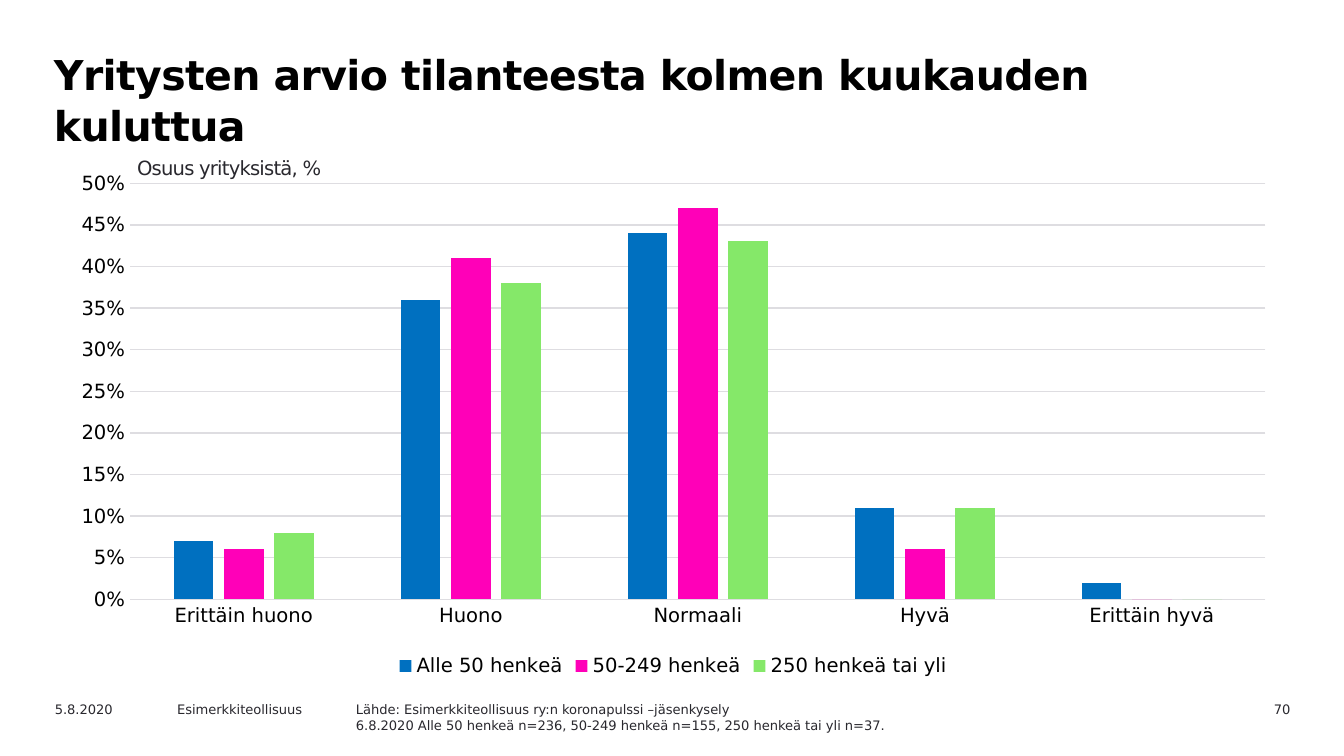
from lxml import etree
from pptx import Presentation
from pptx.chart.data import CategoryChartData
from pptx.dml.color import RGBColor
from pptx.enum.chart import XL_CHART_TYPE, XL_LEGEND_POSITION, XL_TICK_MARK
from pptx.enum.text import MSO_ANCHOR, MSO_AUTO_SIZE, PP_ALIGN
from pptx.oxml.ns import qn
from pptx.util import Pt

COLUMNS = XL_CHART_TYPE.COLUMN_CLUSTERED
BOTTOM = XL_LEGEND_POSITION.BOTTOM
NO_TICK = XL_TICK_MARK.NONE
TOP = MSO_ANCHOR.TOP
NO_FIT = MSO_AUTO_SIZE.NONE
LEFT, RIGHT = PP_ALIGN.LEFT, PP_ALIGN.RIGHT

FONT = "DejaVu Sans"
BLACK, DARK, GRID = "000000", "29282E", "DEDDE1"
FOOTER_TOP = 372.2

CATEGORIES = ["Erittäin huono", "Huono", "Normaali", "Hyvä", "Erittäin hyvä"]
SERIES = [
    ("Alle 50 henkeä", "0070C0", (0.07, 0.36, 0.44, 0.11, 0.02)),
    ("50-249 henkeä", "FF00B8", (0.06, 0.41, 0.47, 0.06, 0)),
    ("250 henkeä tai yli", "85E869", (0.08, 0.38, 0.43, 0.11, 0)),
]


def rgb(value):
    return RGBColor.from_string(value)


def style_font(font, size, color, bold=False):
    font.name = FONT
    font.size = Pt(size)
    font.bold = bold
    font.color.rgb = rgb(color)


def style_text(tf, size, color, bold=False, align=LEFT, spacing=0):
    tf.word_wrap = True
    tf.auto_size = NO_FIT
    tf.vertical_anchor = TOP
    for p in tf.paragraphs:
        p.alignment = align
        for r in p.runs:
            style_font(r.font, size, color, bold)
            if spacing:
                r.font._element.set("spc", str(round(spacing * 100)))


def add_title(s, text):
    sp = s.shapes.title
    sp.left, sp.top, sp.width, sp.height = Pt(20.2), Pt(22.3), Pt(629.3), Pt(51.1)
    tf = sp.text_frame
    tf.text = text
    style_text(tf, 22, BLACK, bold=True, spacing=-0.3)
    p = tf.paragraphs[0]
    p.line_spacing = Pt(27)
    p._p.get_or_add_pPr().set("marL", str(Pt(1.5)))


def add_text(s, text, x, y, w, h, size=7, align=LEFT, spacing=0, inset=None):
    tf = s.shapes.add_textbox(Pt(x), Pt(y), Pt(w), Pt(h)).text_frame
    if inset is not None:
        tf.margin_left = tf.margin_right = Pt(inset)
        tf.margin_top = tf.margin_bottom = Pt(inset)
    tf.text = text
    style_text(tf, size, DARK, align=align, spacing=spacing)


def set_plot_layout(chart, x, y, w, h):
    """Place the inner plot area, in fractions of the chart."""
    area = chart._chartSpace.chart.plotArea
    for old in area.findall(qn("c:layout")):
        area.remove(old)
    layout = etree.Element(qn("c:layout"))
    manual = etree.SubElement(layout, qn("c:manualLayout"))
    parts = [("layoutTarget", "inner"), ("xMode", "edge"), ("yMode", "edge"),
             ("x", x), ("y", y), ("w", w), ("h", h)]
    for tag, val in parts:
        etree.SubElement(manual, qn(f"c:{tag}")).set("val", str(val))
    area.insert(0, layout)


def style_line(line):
    line.color.rgb = rgb(GRID)
    line.width = Pt(0.75)


def add_column_chart(s, x, y, w, h):
    data = CategoryChartData(number_format="0%")
    data.categories = CATEGORIES
    for name, _, values in SERIES:
        data.add_series(name, values)
    chart = s.shapes.add_chart(COLUMNS, Pt(x), Pt(y), Pt(w), Pt(h), data).chart
    chart.has_title = False
    style_font(chart.font, 10, DARK)
    set_plot_layout(chart, 0.06, 0.04, 0.92, 0.8)

    # Columns
    plot = chart.plots[0]
    plot.vary_by_categories = False
    plot.gap_width = 219
    plot.overlap = -27
    for series, (_, color, _) in zip(plot.series, SERIES):
        series.format.fill.solid()
        series.format.fill.fore_color.rgb = rgb(color)

    # Axes
    for axis in (chart.category_axis, chart.value_axis):
        axis.major_tick_mark = axis.minor_tick_mark = NO_TICK
        style_font(axis.tick_labels.font, 10.5, BLACK)
    style_line(chart.category_axis.format.line)
    values = chart.value_axis
    values.minimum_scale, values.maximum_scale, values.major_unit = 0, 0.5, 0.05
    values.tick_labels.number_format = "0%"
    values.tick_labels.number_format_is_linked = False
    values.format.line.fill.background()
    style_line(values.major_gridlines.format.line)

    # Legend
    chart.has_legend = True
    chart.legend.position = BOTTOM
    chart.legend.include_in_layout = False
    style_font(chart.legend.font, 10.5, BLACK)


def main():
    prs = Presentation()
    prs.slide_width, prs.slide_height = Pt(720), Pt(405)
    s = prs.slides.add_slide(prs.slide_layouts[5])

    add_title(s, "Yritysten arvio tilanteesta kolmen kuukauden kuluttua")
    add_column_chart(s, 30.2, 87.1, 661, 278.6)
    add_text(s, "Osuus yrityksistä, %", 70.6, 80.6, 244, 18.7,
             size=10.5, spacing=-0.4, inset=2.9)

    # Footer
    add_text(s, "5.8.2020", 22.3, FOOTER_TOP, 72, 13)
    add_text(s, "Esimerkkiteollisuus", 87.8, FOOTER_TOP, 102.2, 13)
    add_text(s, "Lähde: Esimerkkiteollisuus ry:n koronapulssi –jäsenkysely\n"
                "6.8.2020 Alle 50 henkeä n=236, 50-249 henkeä n=155, "
                "250 henkeä tai yli n=37.", 183.6, FOOTER_TOP, 329, 23)
    add_text(s, "70", 630.7, FOOTER_TOP, 67.7, 13, align=RIGHT)

    prs.save("out.pptx")


if __name__ == "__main__":
    main()
